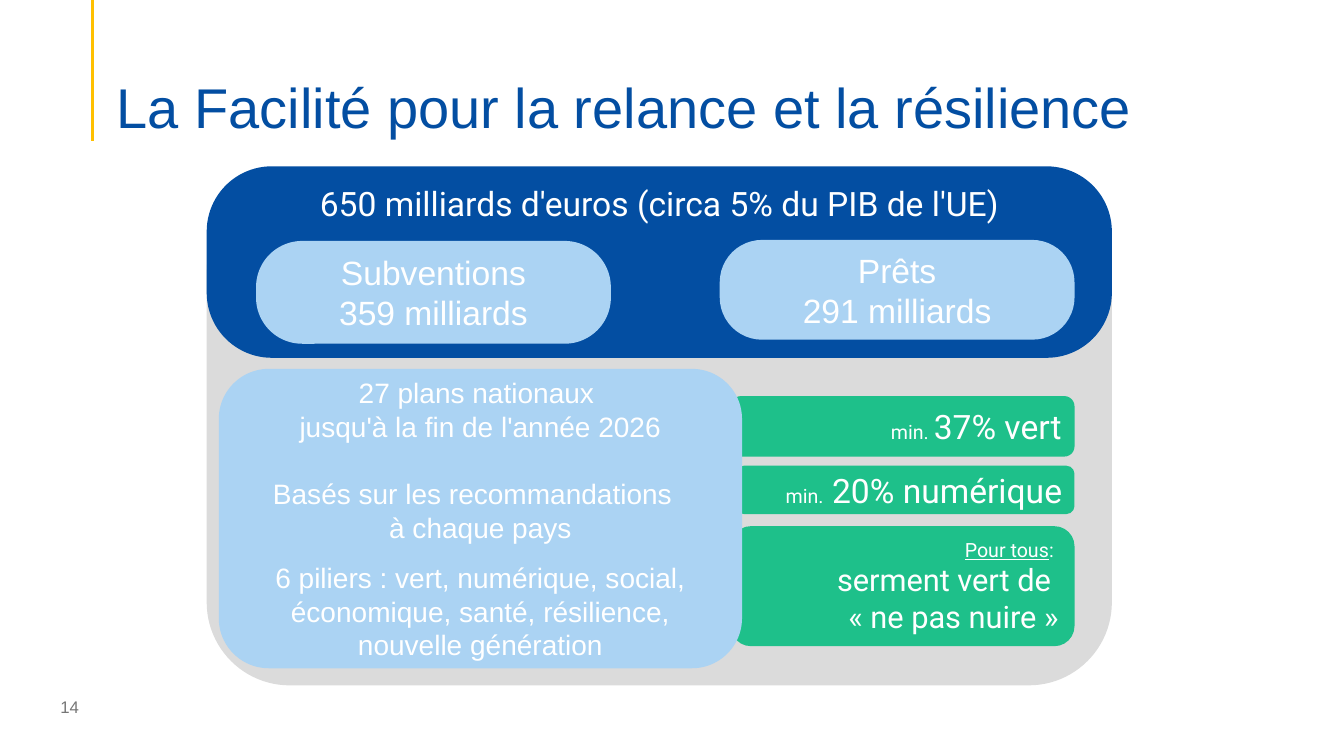
from lxml import etree
from pptx import Presentation
from pptx.dml.color import RGBColor
from pptx.enum.shapes import MSO_CONNECTOR, MSO_SHAPE
from pptx.enum.text import MSO_ANCHOR, PP_ALIGN
from pptx.oxml.ns import qn
from pptx.util import Inches, Pt

ROUNDED = MSO_SHAPE.ROUNDED_RECTANGLE
STRAIGHT = MSO_CONNECTOR.STRAIGHT
TOP, MIDDLE, BOTTOM = MSO_ANCHOR.TOP, MSO_ANCHOR.MIDDLE, MSO_ANCHOR.BOTTOM
LEFT, CENTER, RIGHT = PP_ALIGN.LEFT, PP_ALIGN.CENTER, PP_ALIGN.RIGHT

WIDTH, HEIGHT = Inches(13.33), Inches(7.5)
BLUE, SKY, GREEN, GREY = "034EA2", "ABD3F3", "1EC08A", "DBDBDB"
WHITE, YELLOW, MUTED = "FFFFFF", "FFC000", "767676"
PANEL_LEFT, PANEL_WIDTH = 15.38, 67.35
CARDS_RIGHT = 79.95


def rgb(code):
    """Turn a hex string into a colour."""
    return RGBColor.from_string(code)


def place(left, top, width, height):
    """Convert percentages of the slide into lengths."""
    return [int(share * side / 100) for share, side in
            zip((left, top, width, height), (WIDTH, HEIGHT, WIDTH, HEIGHT))]


def write(frame, paragraphs, font, color, align, anchor):
    """Fill a frame with paragraphs, each a list of (text, size, underlined)."""
    frame.word_wrap = True
    frame.vertical_anchor = anchor
    for index, pieces in enumerate(paragraphs):
        paragraph = frame.paragraphs[0] if index == 0 else frame.add_paragraph()
        paragraph.alignment = align
        for text, size, underlined in pieces:
            for number, line in enumerate(text.split("\n")):
                if number:
                    paragraph.add_line_break()
                run = paragraph.add_run()
                run.text = line
                run.font.name = font
                run.font.size = Pt(size)
                run.font.color.rgb = rgb(color)
                if underlined:
                    run.font.underline = True


def add_card(slide, box, fill, rounding=0.167, paragraphs=(), font="Arial", align=CENTER):
    """Add a rounded card with optional white text."""
    card = slide.shapes.add_shape(ROUNDED, *place(*box))
    card.adjustments[0] = rounding
    card.shadow.inherit = False
    card.fill.solid()
    card.fill.fore_color.rgb = rgb(fill)
    card.line.fill.background()
    write(card.text_frame, paragraphs, font, WHITE, align, MIDDLE)
    return card


def add_label(slide, box, text, size, color, font="Arial", align=LEFT, anchor=TOP):
    """Add a single paragraph of free text."""
    label = slide.shapes.add_textbox(*place(*box))
    write(label.text_frame, [[(text, size, False)]], font, color, align, anchor)
    return label


def add_accent(slide, x, length):
    """Draw the vertical accent line from the top edge."""
    start, _, _, end = place(x, 0, 0, length)
    accent = slide.shapes.add_connector(STRAIGHT, start, 0, start, end)
    accent.line.color.rgb = rgb(YELLOW)
    accent.line.width = Pt(2.25)
    etree.SubElement(accent._element.spPr, qn("a:effectLst"))


def add_heading(slide):
    """Add the accent line and the title."""
    add_accent(slide, 6.9, 18.67)
    title = add_label(slide, (7.95, 7.07, 86.25, 11.47),
                      "La Facilité pour la relance et la résilience", 40, BLUE, anchor=BOTTOM)
    title.text_frame.margin_bottom = 0
    title.text_frame.paragraphs[0].line_spacing = 0.9


def add_funding(slide):
    """Add the total amount with its two components."""
    add_card(slide, (PANEL_LEFT, 24.93, PANEL_WIDTH, 65.73), GREY)
    add_card(slide, (PANEL_LEFT, 22, PANEL_WIDTH, 25.33), BLUE, 0.34)
    add_label(slide, (PANEL_LEFT, 23.47, PANEL_WIDTH, 6.67),
              "650 milliards d'euros (circa 5% du PIB de l'UE)", 24, WHITE, "Roboto", CENTER)
    for left, top, height, rounding, amount in (
        (19.05, 31.87, 13.6, 0.449, "Subventions\n359 milliards"),
        (53.55, 31.73, 13.2, 0.424, "Prêts\n291 milliards"),
    ):
        add_card(slide, (left, top, 26.4, height), SKY, rounding, [[(amount, 24, False)]])


def add_targets(slide):
    """Add the green requirement cards, aligned on their right edge."""
    for left, top, height, paragraphs in (
        (54.38, 52.4, 8, [[("min. ", 14, False), ("37% vert", 24, False)]]),
        (54.75, 61.6, 6.4, [[("min.", 14, False), (" 20% numérique", 24, False)]]),
        (54.38, 69.6, 15.87, [[("Pour tous", 14, True), (": ", 14, False)],
                              [("serment vert de \n« ne pas nuire »", 22, False)]]),
    ):
        add_card(slide, (left, top, CARDS_RIGHT - left, height), GREEN,
                 paragraphs=paragraphs, font="Roboto", align=RIGHT)


def add_plans(slide):
    """Add the card about the national plans."""
    topics = (
        "27 plans nationaux\u00a0\njusqu'à la fin de l'année 2026",
        "Basés sur les recommandations\u00a0 \nà chaque pays",
        "6 piliers : vert, numérique, social, économique, santé, résilience, nouvelle génération",
    )
    plans = add_card(slide, (16.28, 48.8, 38.93, 39.6), SKY,
                     paragraphs=[[(topic, 20, False)] for topic in topics])
    for paragraph, gap in zip(plans.text_frame.paragraphs, (24, 12)):
        paragraph.space_after = Pt(gap)


def main():
    """Build and save the slide."""
    deck = Presentation()
    deck.slide_width, deck.slide_height = WIDTH, HEIGHT
    slide = deck.slides.add_slide(deck.slide_layouts[6])
    add_heading(slide)
    add_funding(slide)
    add_targets(slide)
    add_plans(slide)
    add_label(slide, (3.75, 90.8, 22.5, 5.33), "14", 12, MUTED, anchor=MIDDLE)
    deck.save("out.pptx")


if __name__ == "__main__":
    main()
